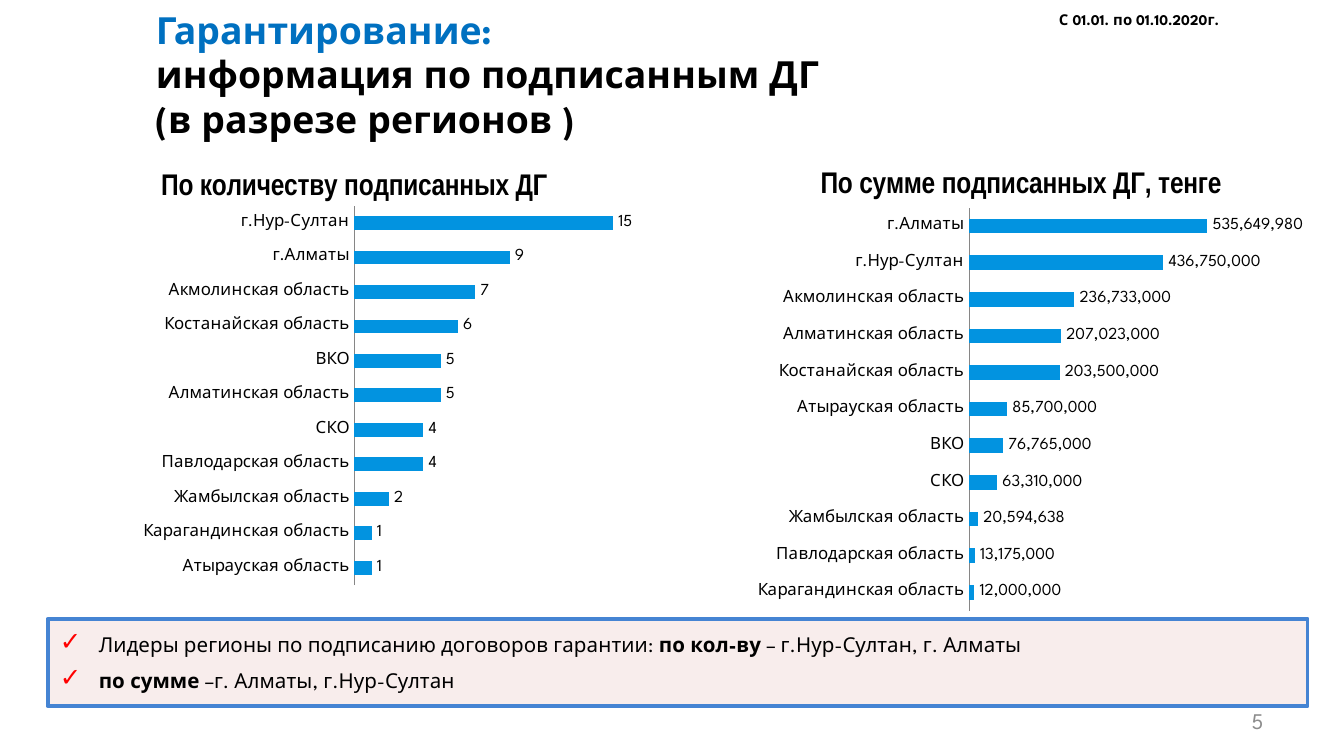
from lxml import etree
from pptx import Presentation
from pptx import util as u
from pptx.chart import data as chart_data
from pptx.dml.color import RGBColor
from pptx.enum import chart as ch, text
from pptx.oxml import parse_xml
from pptx.oxml.ns import nsdecls, qn

Pt = u.Pt
THEME = {
    "font": "League Spartan", "chart_title_font": "Arial Narrow",
    "black": RGBColor.from_string("000000"), "heading": RGBColor.from_string("0070C0"),
    "bar": RGBColor.from_string("0293E0"), "axis": RGBColor.from_string("868686"),
    "box": RGBColor.from_string("F2DCDB"), "box_line": RGBColor.from_string("4584D3"),
    "number": RGBColor.from_string("8C8C8C"), "check": "FF0000",
    "title": 20, "chart_title": 16, "number_size": 12, "list": 11,
    "chart": 10, "label": 9, "date": 8,
}


def style(font, size, color="black", bold=False, face="font"):
    values = {"name": THEME[face], "size": Pt(THEME[size]), "bold": bold}
    for name, value in values.items():
        setattr(font, name, value)
    font.color.rgb = THEME[color]


def place(part, left, top, width, height, **frame_format):
    for name, value in zip(("left", "top", "width", "height"), (left, top, width, height)):
        setattr(part, name, Pt(value))
    frame = part.text_frame
    for name, value in {"auto_size": text.MSO_AUTO_SIZE.NONE, "word_wrap": True,
                        **frame_format}.items():
        setattr(frame, name, value)
    return frame


prs = Presentation()
prs.slide_width, prs.slide_height = Pt(720), Pt(405)
slide = prs.slides.add_slide(prs.slide_layouts[1])
heading, leaders = slide.placeholders

# Title
heading_frame = place(heading, 76.3, 0, 504.7, 64, vertical_anchor=text.MSO_ANCHOR.TOP)
heading_lines = [
    [("Гарантирование: ", "heading"), ("информация по подписанным ДГ", "black")],
    [("(в разрезе регионов )", "black")],
]
for i, parts in enumerate(heading_lines):
    line = heading_frame.add_paragraph() if i else heading_frame.paragraphs[0]
    line.alignment, line.line_spacing = text.PP_ALIGN.LEFT, 1.0
    for j, (words, color) in enumerate(parts):
        if j:
            line.add_line_break()
        run = line.add_run()
        run.text = words
        style(run.font, "title", color, bold=True)

# Period and slide number
small_texts = [
    ("С 01.01. по 01.10.2020г.", (560.2, 2.2, 106.6, 17.3), "date", "black", True,
     text.PP_ALIGN.LEFT, {"word_wrap": False}),
    ("5", (516.2, 375, 167.8, 21.6), "number_size", "number", False,
     text.PP_ALIGN.RIGHT, {"vertical_anchor": text.MSO_ANCHOR.MIDDLE}),
]
for words, spot, size, color, bold, align, frame_format in small_texts:
    box = slide.shapes.add_textbox(*map(Pt, spot))
    line = place(box, *spot, **frame_format).paragraphs[0]
    line.alignment = align
    run = line.add_run()
    run.text = words
    style(run.font, size, color, bold)

# Leading regions
leaders_frame = place(leaders, 25.5, 331.5, 675, 46.8,
                      vertical_anchor=text.MSO_ANCHOR.MIDDLE,
                      margin_left=Pt(5.8), margin_right=Pt(5.8),
                      margin_top=Pt(2.9), margin_bottom=Pt(2.9))
leaders.fill.solid()
leaders.fill.fore_color.rgb = THEME["box"]
tint = leaders.fill._xPr.find(qn("a:solidFill"))[0]
etree.SubElement(tint, qn("a:alpha"), val="50000")
leaders.line.color.rgb, leaders.line.width = THEME["box_line"], Pt(2)
leader_lines = [
    [("Лидеры регионы по подписанию договоров гарантии: ", False),
     ("по кол-ву ", True), ("– г.Нур-Султан, г. Алматы", False)],
    [("по сумме ", True), ("–г. Алматы, г.Нур-Султан", False)],
]
for i, parts in enumerate(leader_lines):
    line = leaders_frame.add_paragraph() if i else leaders_frame.paragraphs[0]
    for name, value in {"line_spacing": 1.0, "space_before": Pt(0), "space_after": Pt(6),
                        "alignment": text.PP_ALIGN.LEFT}.items():
        setattr(line, name, value)
    props = line._p.get_or_add_pPr()
    props.set("marL", str(Pt(21.6)))
    props.set("indent", str(Pt(-20.9)))
    bullet_color = etree.SubElement(props, qn("a:buClr"))
    etree.SubElement(bullet_color, qn("a:srgbClr"), val=THEME["check"])
    etree.SubElement(props, qn("a:buSzPct"), val="125000")
    etree.SubElement(props, qn("a:buFont"), typeface=THEME["font"])
    etree.SubElement(props, qn("a:buChar"), char="✓")
    for words, bold in parts:
        run = line.add_run()
        run.text = words
        style(run.font, "list", bold=bold)

# Charts by region, listed from the bottom bar up
charts = [
    {"title": "По количеству подписанных ДГ", "spot": (20, 79.9, 339.8, 242.6),
     "plot": (0.5, 0.125, 0.435, 0.838), "top": 16, "format": "General", "axis_width": 1,
     "regions": {
         "Атырауская область": 1, "Карагандинская область": 1, "Жамбылская область": 2,
         "Павлодарская область": 4, "СКО": 4, "Алматинская область": 5, "ВКО": 5,
         "Костанайская область": 6, "Акмолинская область": 7, "г.Алматы": 9,
         "г.Нур-Султан": 15}},
    {"title": "По сумме подписанных ДГ, тенге", "spot": (382.6, 78.5, 329, 257.8),
     "plot": (0.415, 0.127, 0.435, 0.838), "top": 600_000_000, "format": "#,##0",
     "axis_width": 0.5,
     "regions": {
         "Карагандинская область": 12000000, "Павлодарская область": 13175000,
         "Жамбылская область": 20594638, "СКО": 63310000, "ВКО": 76765000,
         "Атырауская область": 85700000, "Костанайская область": 203500000,
         "Алматинская область": 207023000, "Акмолинская область": 236733000,
         "г.Нур-Султан": 436750000, "г.Алматы": 535649980}},
]
for item in charts:
    figures = chart_data.CategoryChartData(number_format=item["format"])
    figures.categories = item["regions"].keys()
    figures.add_series(item["title"], item["regions"].values())
    chart = slide.shapes.add_chart(ch.XL_CHART_TYPE.BAR_CLUSTERED,
                                   *map(Pt, item["spot"]), figures).chart
    style(chart.font, "chart")
    chart.has_legend = False
    chart.has_title = True
    caption = chart.chart_title.text_frame.paragraphs[0].add_run()
    caption.text = item["title"]
    style(caption.font, "chart_title", bold=True, face="chart_title_font")

    # Axes
    for name, value in {"visible": False, "has_major_gridlines": False,
                        "minimum_scale": 0, "maximum_scale": item["top"]}.items():
        setattr(chart.value_axis, name, value)
    region_axis = chart.category_axis
    region_axis.major_tick_mark = ch.XL_TICK_MARK.NONE
    style(region_axis.tick_labels.font, "label")
    region_axis.format.line.color.rgb = THEME["axis"]
    region_axis.format.line.width = Pt(item["axis_width"])

    # Bars and their values
    bars = chart.plots[0]
    bars.gap_width, bars.vary_by_categories, bars.has_data_labels = 150, False, True
    fill = bars.series[0].format.fill
    fill.solid()
    fill.fore_color.rgb = THEME["bar"]
    for name, value in {"show_value": True, "number_format": item["format"],
                        "number_format_is_linked": False,
                        "position": ch.XL_LABEL_POSITION.OUTSIDE_END}.items():
        setattr(bars.data_labels, name, value)
    style(bars.data_labels.font, "label")

    # Plot position as shares of the chart
    area = chart._chartSpace.chart.plotArea
    for old in area.findall(qn("c:layout")):
        area.remove(old)
    shares = "".join(f'<c:{key} val="{share}"/>' for key, share in zip("xywh", item["plot"]))
    area.insert(0, parse_xml(
        f'<c:layout {nsdecls("c")}><c:manualLayout><c:layoutTarget val="inner"/>'
        f'<c:xMode val="edge"/><c:yMode val="edge"/>{shares}</c:manualLayout></c:layout>'))

prs.save("out.pptx")
